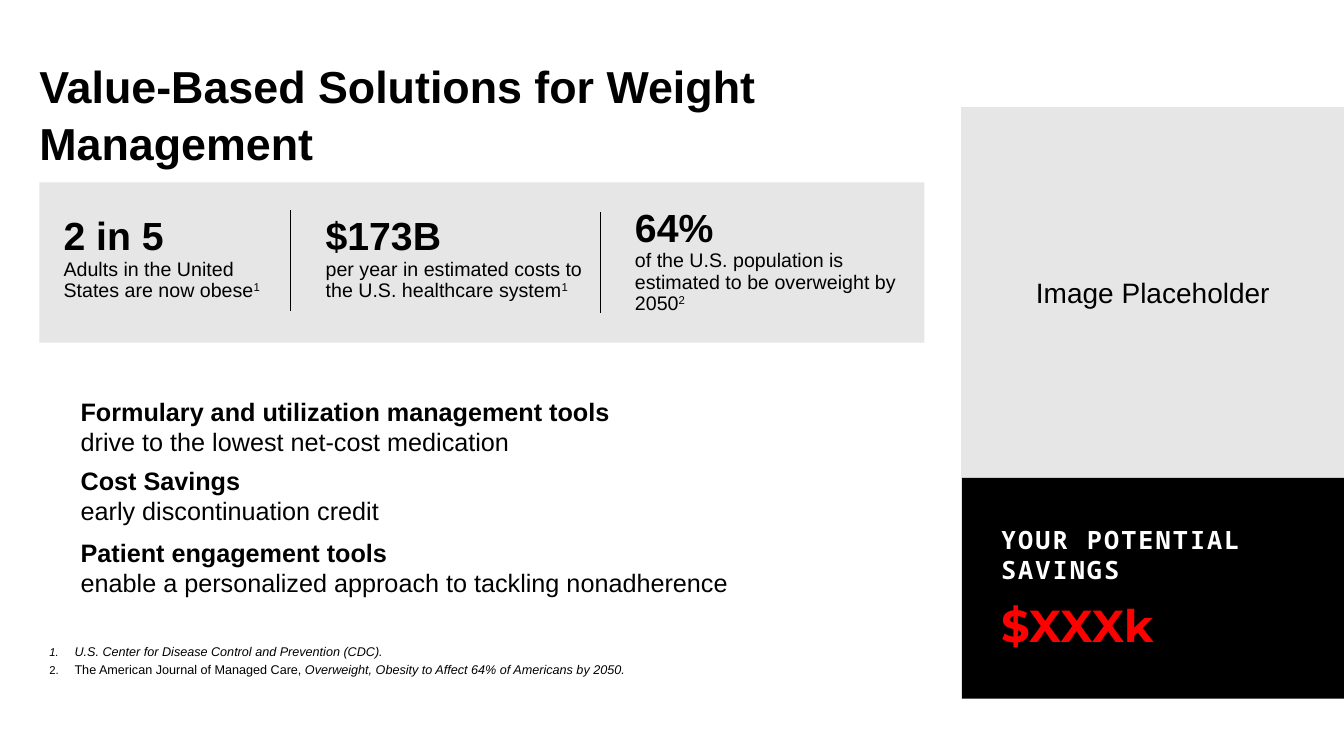
from dataclasses import dataclass

from lxml import etree
from pptx import Presentation
from pptx.dml.color import RGBColor
from pptx.enum.shapes import MSO_CONNECTOR, MSO_SHAPE
from pptx.enum.text import MSO_ANCHOR, MSO_AUTO_SIZE, PP_ALIGN
from pptx.oxml.ns import qn
from pptx.util import Pt

BLACK = RGBColor(0x00, 0x00, 0x00)
WHITE = RGBColor(0xFF, 0xFF, 0xFF)
RED = RGBColor(0xFF, 0x00, 0x00)
GREY = RGBColor(0xE7, 0xE6, 0xE6)
RECTANGLE = MSO_SHAPE.RECTANGLE
STRAIGHT = MSO_CONNECTOR.STRAIGHT
TOP, MIDDLE, BOTTOM = MSO_ANCHOR.TOP, MSO_ANCHOR.MIDDLE, MSO_ANCHOR.BOTTOM
NO_AUTOFIT = MSO_AUTO_SIZE.NONE
LEFT, CENTER = PP_ALIGN.LEFT, PP_ALIGN.CENTER

SLIDE_WIDTH, SLIDE_HEIGHT = 960, 540
MARGIN = 28.1
SIDEBAR_LEFT, SIDEBAR_WIDTH = 687, 273


@dataclass(frozen=True)
class Box:
    left: float
    top: float
    width: float
    height: float

    def lengths(self):
        return Pt(self.left), Pt(self.top), Pt(self.width), Pt(self.height)


@dataclass(frozen=True)
class Stat:
    box: Box
    figure: str
    caption: str
    source: str


@dataclass(frozen=True)
class Benefit:
    top: float
    heading: str
    detail: str


@dataclass(frozen=True)
class Footnote:
    publisher: str
    article: str


STATS = [
    Stat(Box(45.4, 154.8, 152.6, 61.2), "2 in 5",
         "Adults in the United States are now obese", "1"),
    Stat(Box(232.6, 154.8, 195.8, 61.2), "$173B",
         "per year in estimated costs to the U.S. healthcare system", "1"),
    Stat(Box(453.6, 149, 190.1, 76.3), "64%",
         "of the U.S. population is estimated to be overweight by 2050", "2"),
]
DIVIDERS = [(207.2, 150.3), (429.1, 151.3)]
DIVIDER_HEIGHT = 72
BENEFITS = [
    Benefit(279.4, "Formulary and utilization management tools",
            "drive to the lowest net-cost medication"),
    Benefit(329, "Cost Savings", "early discontinuation credit"),
    Benefit(380.2, "Patient engagement tools",
            "enable a personalized approach to tackling nonadherence"),
]
FOOTNOTES = [
    Footnote("", "U.S. Center for Disease Control and Prevention (CDC)."),
    Footnote("The American Journal of Managed Care, ",
             "Overweight, Obesity to Affect 64% of Americans by 2050."),
]


def format_run(run, size: float, color: RGBColor = BLACK, bold: bool = False,
               italic: bool = False, font: str = "Arial") -> None:
    run.font.name = font
    run.font.size = Pt(size)
    run.font.bold = bold
    run.font.italic = italic
    run.font.color.rgb = color


def set_frame(frame, anchor=TOP, inset: float = 0) -> None:
    frame.word_wrap = True
    frame.auto_size = NO_AUTOFIT
    frame.vertical_anchor = anchor
    frame.margin_left = frame.margin_right = Pt(inset)
    frame.margin_top = frame.margin_bottom = Pt(inset)


def add_text_frame(slide, box: Box, anchor=TOP):
    frame = slide.shapes.add_textbox(*box.lengths()).text_frame
    set_frame(frame, anchor)
    return frame


def add_panel(slide, box: Box, fill: RGBColor):
    panel = slide.shapes.add_shape(RECTANGLE, *box.lengths())
    panel.shadow.inherit = False
    panel.fill.solid()
    panel.fill.fore_color.rgb = fill
    panel.line.fill.background()
    return panel


def add_divider(slide, x: float, top: float) -> None:
    divider = slide.shapes.add_connector(
        STRAIGHT, Pt(x), Pt(top), Pt(x), Pt(top + DIVIDER_HEIGHT))
    divider.line.color.rgb = BLACK
    divider.line.width = Pt(0.5)
    etree.SubElement(divider._element.spPr, qn("a:effectLst"))


def add_title(slide) -> None:
    title = slide.shapes.title
    title.left, title.top, title.width, title.height = Box(MARGIN, 41, 597.6, 79.2).lengths()
    frame = title.text_frame
    frame.text = "Value-Based Solutions for Weight Management"
    set_frame(frame, MIDDLE)
    heading = frame.paragraphs[0]
    heading.alignment = LEFT
    heading.line_spacing = 1.05
    format_run(heading.runs[0], 32, bold=True)


def add_stat(slide, stat: Stat) -> None:
    frame = add_text_frame(slide, stat.box)
    frame.text = f"{stat.figure}\n{stat.caption}"
    figure, caption = frame.paragraphs
    figure.line_spacing = caption.line_spacing = 0.9
    format_run(figure.runs[0], 28, bold=True)
    format_run(caption.runs[0], 14)
    source = caption.add_run()
    source.text = stat.source
    format_run(source, 14)
    source._r.get_or_add_rPr().set("baseline", "30000")


def add_benefit(slide, benefit: Benefit) -> None:
    frame = add_text_frame(slide, Box(57.6, benefit.top, 600, 51.1))
    frame.margin_top = frame.margin_bottom = Pt(3.6)
    paragraph = frame.paragraphs[0]
    paragraph.text = f"{benefit.heading}\v{benefit.detail}"
    heading, detail = paragraph.runs
    format_run(heading, 18, bold=True)
    format_run(detail, 18)


def add_image_area(slide) -> None:
    area = add_panel(slide, Box(SIDEBAR_LEFT, 77, SIDEBAR_WIDTH, 264.3), GREY)
    area.line.color.rgb = GREY
    area.line.width = Pt(1)
    set_frame(area.text_frame, MIDDLE, 3)
    area.text_frame.text = "Image Placeholder"
    label = area.text_frame.paragraphs[0]
    label.alignment = CENTER
    format_run(label.runs[0], 20)


def add_savings(slide) -> None:
    add_panel(slide, Box(SIDEBAR_LEFT, 341.3, SIDEBAR_WIDTH, 157.7), BLACK)
    frame = add_text_frame(slide, Box(715, 374.4, 217.4, 91.4))
    frame.text = "YOUR POTENTIAL SAVINGS\n$XXXk"
    label, amount = frame.paragraphs
    label.space_after = amount.space_after = Pt(6)
    amount.space_before = Pt(3)
    format_run(label.runs[0], 18, WHITE, bold=True, font="Noto Sans Mono")
    label.runs[0]._r.get_or_add_rPr().set("spc", "150")
    format_run(amount.runs[0], 32, RED, bold=True, font="Montserrat")


def number_paragraph(paragraph) -> None:
    properties = paragraph._p.get_or_add_pPr()
    properties.set("marL", str(Pt(18)))
    properties.set("indent", str(-Pt(18)))
    etree.SubElement(properties, qn("a:buSzPct"), val="90000")
    etree.SubElement(properties, qn("a:buFont"), typeface="Arial")
    etree.SubElement(properties, qn("a:buAutoNum"), type="arabicPeriod")


def add_footnotes(slide) -> None:
    frame = add_text_frame(slide, Box(35.3, 429.1, 782.6, 54.7), BOTTOM)
    frame.text = "\n".join(note.publisher or note.article for note in FOOTNOTES)
    for paragraph, note in zip(frame.paragraphs, FOOTNOTES):
        number_paragraph(paragraph)
        paragraph.line_spacing = 1.2
        format_run(paragraph.runs[0], 9, italic=not note.publisher)
        if note.publisher:
            article = paragraph.add_run()
            article.text = note.article
            format_run(article, 9, italic=True)


def main() -> None:
    deck = Presentation()
    deck.slide_width, deck.slide_height = Pt(SLIDE_WIDTH), Pt(SLIDE_HEIGHT)
    slide = deck.slides.add_slide(deck.slide_layouts.get_by_name("Title Only"))
    add_title(slide)
    add_panel(slide, Box(MARGIN, 130.3, 632.2, 114.5), GREY)
    for x, top in DIVIDERS:
        add_divider(slide, x, top)
    for stat in STATS:
        add_stat(slide, stat)
    for benefit in BENEFITS:
        add_benefit(slide, benefit)
    add_image_area(slide)
    add_savings(slide)
    add_footnotes(slide)
    deck.save("out.pptx")


if __name__ == "__main__":
    main()
